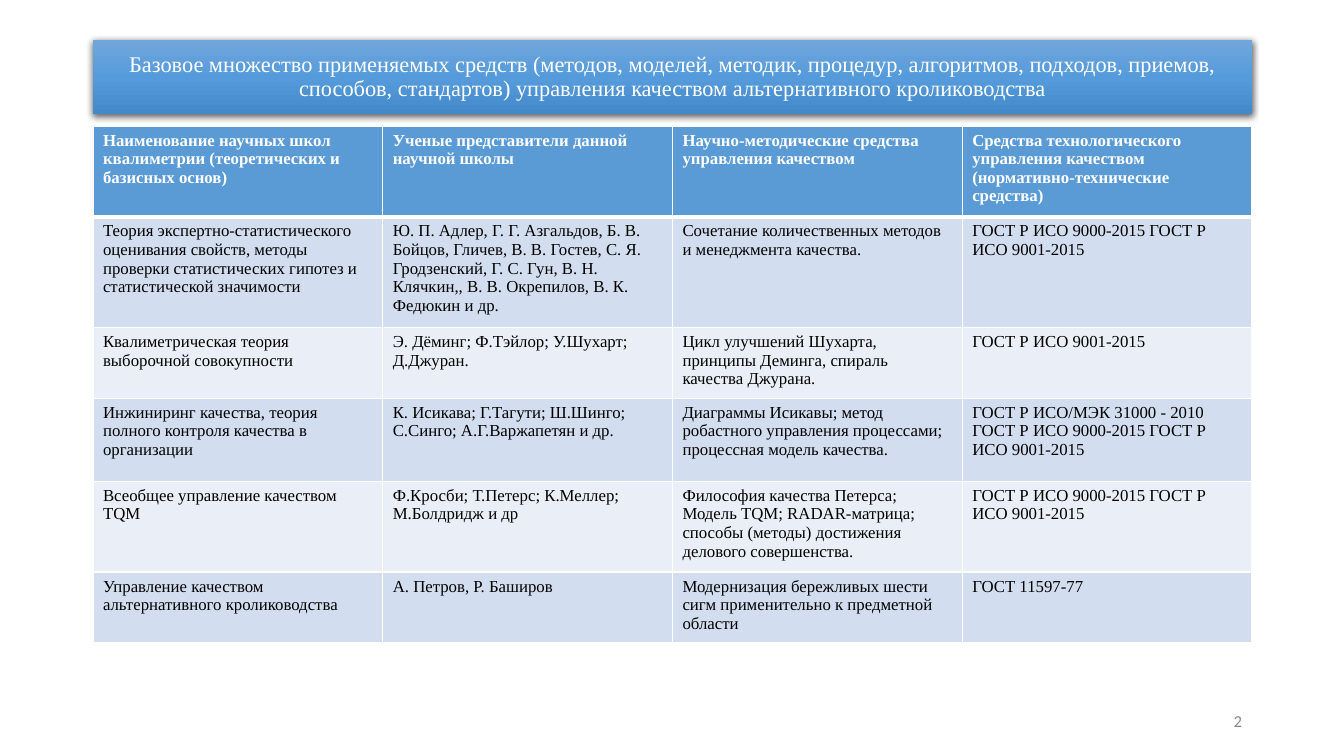
import pptx
import pptx.util
import pptx.oxml
import pptx.oxml.ns
import pptx.dml.color
import pptx.enum.text
import pptx.enum.shapes

RGB = pptx.dml.color.RGBColor
ALIGN = pptx.enum.text.PP_ALIGN
MIDDLE = pptx.enum.text.MSO_ANCHOR.MIDDLE

TITLE = ("Базовое множество применяемых средств (методов, моделей, методик, процедур, "
         "алгоритмов, подходов, приемов, способов, стандартов) управления качеством "
         "альтернативного кролиководства")
HEADS = (
    "Наименование научных школ квалиметрии (теоретических и базисных основ)",
    "Ученые представители данной научной школы",
    "Научно-методические средства управления качеством",
    "Средства технологического управления качеством (нормативно-технические средства)",
)
SCHOOLS = [
    ("Теория экспертно-статистического оценивания свойств, методы проверки "
     "статистических гипотез и статистической значимости",
     "Ю. П. Адлер, Г. Г. Азгальдов, Б. В. Бойцов, Гличев, В. В. Гостев, C. Я. Гродзенский, "
     "Г. С. Гун, В. Н. Клячкин,, В. В. Окрепилов, В. К. Федюкин и др.",
     "Сочетание количественных методов и менеджмента качества.",
     "ГОСТ Р ИСО 9000-2015 ГОСТ Р ИСО 9001-2015"),
    ("Квалиметрическая теория выборочной совокупности",
     "Э. Дёминг; Ф.Тэйлор; У.Шухарт; Д.Джуран.",
     "Цикл улучшений Шухарта, принципы Деминга, спираль качества Джурана.",
     "ГОСТ Р ИСО 9001-2015"),
    ("Инжиниринг качества, теория полного контроля качества в организации",
     "К. Исикава; Г.Тагути; Ш.Шинго; С.Синго; А.Г.Варжапетян и др.",
     "Диаграммы Исикавы; метод робастного управления процессами; "
     "процессная модель качества.",
     "ГОСТ Р ИСО/МЭК 31000 - 2010 ГОСТ Р ИСО 9000-2015 ГОСТ Р ИСО 9001-2015"),
    ("Всеобщее управление качеством TQM",
     "Ф.Кросби; Т.Петерс; К.Меллер; М.Болдридж и др",
     "Философия качества Петерса; Модель TQM; RADAR-матрица; способы (методы) "
     "достижения делового совершенства.",
     "ГОСТ Р ИСО 9000-2015 ГОСТ Р ИСО 9001-2015"),
    ("Управление качеством альтернативного кролиководства",
     "А. Петров, Р. Баширов",
     "Модернизация бережливых шести сигм применительно к предметной области",
     "ГОСТ 11597-77"),
]
ROWS = (84, 104, 66, 83, 85, 66)
LEFT, WIDTH = 93, 1159

WHITE = RGB(0xFF, 0xFF, 0xFF)
BLACK = RGB(0x00, 0x00, 0x00)
GREY = RGB(0x8C, 0x8C, 0x8C)
HEAD = RGB(0x5B, 0x9B, 0xD5)
BANDS = (RGB(0xD2, 0xDE, 0xEF), RGB(0xEA, 0xEF, 0xF7))
SHADES = ((0, RGB(0x71, 0xA6, 0xDB)), (50, RGB(0x55, 0x9B, 0xDB)),
          (100, RGB(0x44, 0x8A, 0xCA)))
SERIF, SANS = "Times New Roman", "Calibri"


def px(*sizes):
    return [pptx.util.Emu(round(size * 914400 / 100.8)) for size in sizes]


def node(xml):
    """Parse one XML element in the drawing namespace."""
    space = pptx.oxml.ns.nsdecls("a")
    return pptx.oxml.parse_xml(xml.replace(">", f" {space}>", 1))


def write(frame, text, size, font, color, align=ALIGN.LEFT, bold=False):
    frame.word_wrap = True
    para = frame.paragraphs[0]
    para.alignment = align
    run = para.add_run()
    run.text = text
    run.font.size = pptx.util.Pt(size)
    run.font.name = font
    run.font.bold = bold
    run.font.color.rgb = color
    return para


def add_title(slide):
    bar = slide.shapes.add_shape(pptx.enum.shapes.MSO_SHAPE.RECTANGLE,
                                 *px(LEFT, 40, WIDTH, 74))
    bar.line.fill.background()
    bar.shadow.inherit = False
    props = bar._element.spPr
    stops = "".join(f'<a:gs pos="{pos * 1000}"><a:srgbClr val="{color}"/></a:gs>'
                    for pos, color in SHADES)
    props.insert(2, node(f'<a:gradFill rotWithShape="1"><a:gsLst>{stops}</a:gsLst>'
                         '<a:lin ang="5400000" scaled="0"/></a:gradFill>'))
    props.find(pptx.oxml.ns.qn("a:effectLst")).append(node(
        '<a:outerShdw blurRad="57150" dist="19050" dir="5400000" algn="ctr" '
        'rotWithShape="0"><a:srgbClr val="000000"><a:alpha val="63000"/></a:srgbClr>'
        '</a:outerShdw>'))
    bar.text_frame.vertical_anchor = MIDDLE
    para = write(bar.text_frame, TITLE, 16, SERIF, WHITE, ALIGN.CENTER)
    para.line_spacing = 0.9


def add_border(cell, side, width):
    cell._tc.get_or_add_tcPr().append(node(
        f'<a:ln{side} w="{pptx.util.Pt(width)}"><a:solidFill><a:srgbClr val="{WHITE}"/>'
        f'</a:solidFill></a:ln{side}>'))


def add_schools(slide):
    data = [HEADS] + SCHOOLS
    table = slide.shapes.add_table(len(data), len(HEADS),
                                   *px(LEFT, 126, WIDTH, sum(ROWS))).table
    for row, (height, texts) in enumerate(zip(ROWS, data)):
        table.rows[row].height = px(height)[0]
        top = row == 0
        for col, text in enumerate(texts):
            cell = table.cell(row, col)
            for side in "LRTB":
                thick = (top and side == "B") or (row == 1 and side == "T")
                add_border(cell, side, 3 if thick else 1)
            cell.fill.solid()
            cell.fill.fore_color.rgb = HEAD if top else BANDS[(row - 1) % 2]
            write(cell.text_frame, text, 12, SERIF, WHITE if top else BLACK, bold=top)


def add_number(slide):
    box = slide.shapes.add_textbox(*px(950, 701, 302, 40))
    box.text_frame.vertical_anchor = MIDDLE
    write(box.text_frame, "2", 12, SANS, GREY, ALIGN.RIGHT)


def main():
    deck = pptx.Presentation()
    deck.slide_width, deck.slide_height = px(1344, 756)
    slide = deck.slides.add_slide(deck.slide_layouts[6])
    add_title(slide)
    add_number(slide)
    add_schools(slide)
    deck.save("out.pptx")


if __name__ == "__main__":
    main()
